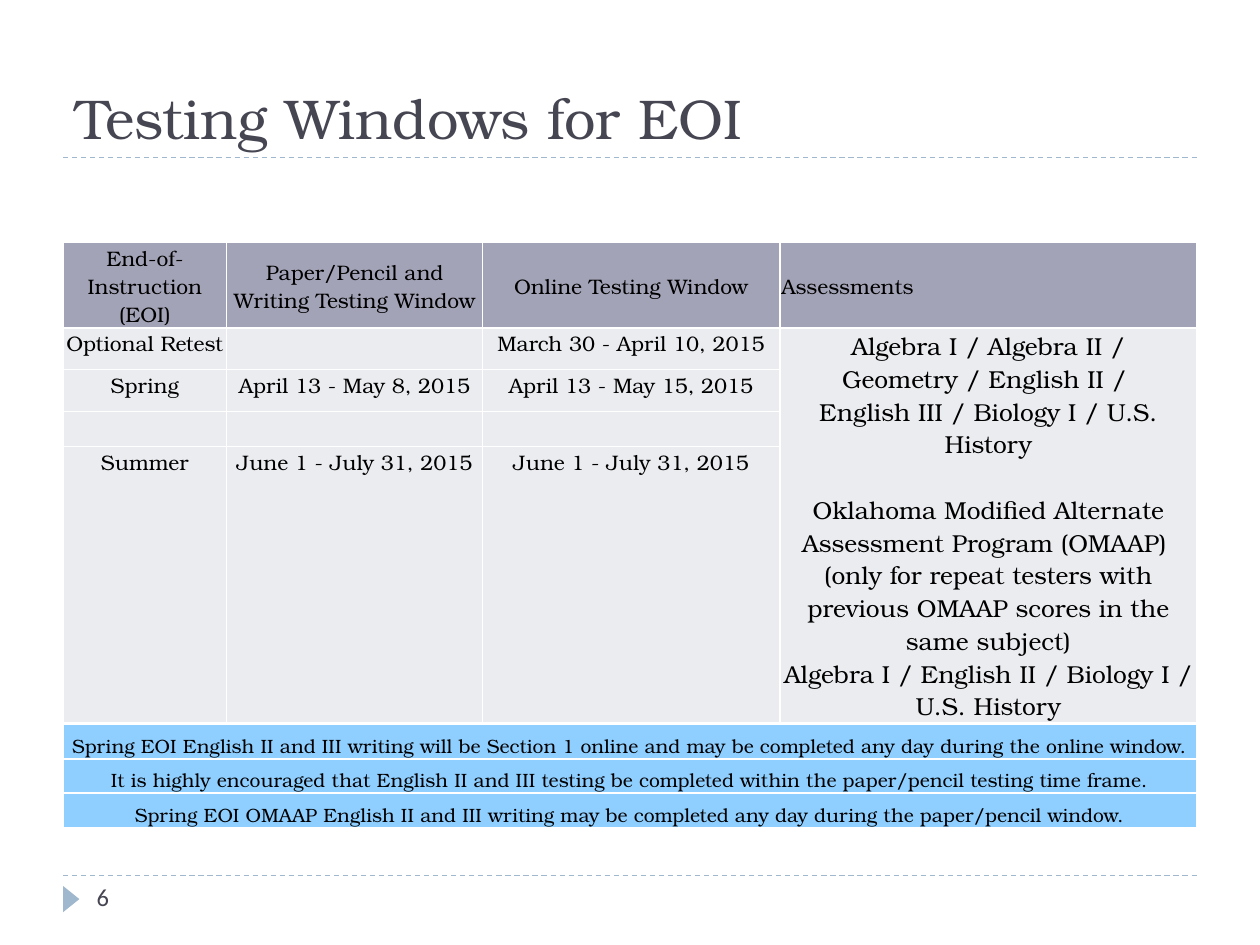
from copy import deepcopy

from lxml import etree
from pptx import Presentation
from pptx.dml.color import RGBColor
from pptx.enum.dml import MSO_LINE
from pptx.enum.shapes import MSO_CONNECTOR, MSO_SHAPE
from pptx.enum.text import MSO_ANCHOR, MSO_AUTO_SIZE, PP_ALIGN
from pptx.oxml.ns import qn
from pptx.util import Cm, Pt

TOP, MIDDLE, BOTTOM = MSO_ANCHOR.TOP, MSO_ANCHOR.MIDDLE, MSO_ANCHOR.BOTTOM
LEFT, CENTER = PP_ALIGN.LEFT, PP_ALIGN.CENTER
SERIF, SANS = "TeX Gyre Bonum", "Calibri"
COLORS = {"title": "464653", "text": "000000", "accent": "9FB8CD",
          "header": "A3A3B7", "body": "EBECF0", "note": "8FCFFF",
          "border": "FFFFFF"}


def rgb(name):
    return RGBColor.from_string(COLORS[name])


def write(tf, text, size=12, font=SERIF, color="text", align=LEFT,
          anchor=TOP, gap=0):
    """Fill a text frame; text is a string or a list of paragraphs."""
    tf.word_wrap = True
    tf.vertical_anchor = anchor
    for i, content in enumerate([text] if isinstance(text, str) else text):
        p = tf.add_paragraph() if i else tf.paragraphs[0]
        p.text = content
        p.alignment = align
        p.space_before = Pt(gap if i else 0)
        for r in p.runs:
            r.font.size, r.font.name = Pt(size), font
            r.font.color.rgb = rgb(color)
        # Line breaks and empty paragraphs carry their own size
        for br in p._p.findall(qn("a:br")):
            br.insert(0, deepcopy(p.runs[0].font._element))
        if not content:
            etree.SubElement(p._p, qn("a:endParaRPr"), sz=str(size * 100))


class SlideBuilder:
    def __init__(self, prs):
        self.slide = prs.slides.add_slide(prs.slide_layouts[5])
        self.shapes = self.slide.shapes

    def title(self, text, x, y, w, h):
        s = self.shapes.title
        s.left, s.top, s.width, s.height = Cm(x), Cm(y), Cm(w), Cm(h)
        write(s.text_frame, text, size=32, color="title", anchor=BOTTOM)
        s.text_frame.auto_size = MSO_AUTO_SIZE.NONE

    def rule(self, x, y, w):
        s = self.shapes.add_connector(MSO_CONNECTOR.STRAIGHT,
                                      Cm(x), Cm(y), Cm(x + w), Cm(y))
        s.line.color.rgb = rgb("accent")
        s.line.width = Pt(0.75)
        s.line.dash_style = MSO_LINE.DASH
        etree.SubElement(s._element.spPr, qn("a:effectLst"))

    def marker(self, x, y, w, h):
        s = self.shapes.add_shape(MSO_SHAPE.ISOSCELES_TRIANGLE,
                                  Cm(x), Cm(y), Cm(w), Cm(h))
        s.rotation = 90
        s.shadow.inherit = False
        s.fill.solid()
        s.fill.fore_color.rgb = rgb("accent")
        s.line.fill.background()

    def text(self, text, x, y, w, h, **fmt):
        s = self.shapes.add_textbox(Cm(x), Cm(y), Cm(w), Cm(h))
        write(s.text_frame, text, **fmt)

    def table(self, x, y, widths, heights):
        table = self.shapes.add_table(
            len(heights), len(widths), Cm(x), Cm(y),
            Cm(sum(widths)), Cm(sum(heights))).table
        table.first_row = table.horz_banding = False
        for column, width in zip(table.columns, widths):
            column.width = Cm(width)
        for row, height in zip(table.rows, heights):
            row.height = Cm(height)
        return table

    def cell(self, cell, text, fill, anchor=TOP, **fmt):
        cell.margin_left = cell.margin_right = cell.margin_top = Cm(0.03)
        cell.margin_bottom = 0
        write(cell.text_frame, text, **{"align": CENTER, **fmt})
        cell.vertical_anchor = anchor
        tc_pr = cell._tc.get_or_add_tcPr()
        for side in ("lnL", "lnR", "lnT", "lnB"):
            ln = etree.SubElement(tc_pr, qn(f"a:{side}"), w=str(Pt(1)))
            solid = etree.SubElement(ln, qn("a:solidFill"))
            etree.SubElement(solid, qn("a:srgbClr"), val=COLORS["border"])
        cell.fill.solid()
        cell.fill.fore_color.rgb = rgb(fill)


HEADERS = ["End-of-Instruction (EOI)", "Paper/Pencil and Writing Testing Window",
           "Online Testing Window", "Assessments"]
WINDOWS = [
    ["Optional Retest", "", "March 30 - April 10, 2015"],
    ["Spring", "April 13 - May 8, 2015", "April 13 - May 15, 2015"],
    ["", "", ""],
    ["Summer", "June 1 - July 31, 2015", "June 1 - July 31, 2015"],
]
ASSESSMENTS = [
    "Algebra I / Algebra II / Geometry / English II / \n"
    "English III / Biology I / U.S. History",
    "Oklahoma Modified Alternate Assessment Program (OMAAP) \n"
    "(only for repeat testers with previous OMAAP scores in the same subject)\n"
    "Algebra I / English II / Biology I / U.S. History",
]
NOTES = [
    "Spring EOI English II and III writing will be Section 1 online and may be "
    "completed any day during the online window.",
    "It is highly encouraged that English II and III testing be completed within "
    "the paper/pencil testing time frame.",
    "Spring EOI OMAAP English II and III writing may be completed any day during "
    "the paper/pencil window.",
]
MARGIN, WIDTH = 1.27, 22.86


def main():
    prs = Presentation()
    prs.slide_width, prs.slide_height = Cm(25.4), Cm(19.05)
    s = SlideBuilder(prs)

    # Frame and title
    for y in (17.65, 3.17):
        s.rule(MARGIN, y, WIDTH)
    s.marker(1.17, 17.96, 0.53, 0.33)
    s.title("Testing Windows for EOI", MARGIN, 0.43, WIDTH, 2.74)

    # Testing windows
    windows = s.table(MARGIN, 4.88, [3.3, 5.16, 5.99, 8.41],
                      [1.71, 0.84, 0.84, 0.71, 5.54])
    for col, text in enumerate(HEADERS):
        s.cell(windows.cell(0, col), text, "header", anchor=MIDDLE,
               align=LEFT if text == "Assessments" else CENTER)
    for row, texts in enumerate(WINDOWS, 1):
        for col, text in enumerate(texts):
            s.cell(windows.cell(row, col), text, "body")
    windows.cell(1, 3).merge(windows.cell(4, 3))
    s.cell(windows.cell(1, 3), ASSESSMENTS, "body", anchor=MIDDLE,
           size=14, gap=18.7)

    # Notes
    notes = s.table(MARGIN, 14.61, [WIDTH], [0.69] * len(NOTES))
    for row, text in enumerate(NOTES):
        s.cell(notes.cell(row, 0), text, "note", anchor=BOTTOM, size=11)

    # Page number
    s.text("6", 1.7, 17.65, 5.51, 1.02, size=14, font=SANS, color="title")

    prs.save("out.pptx")


if __name__ == "__main__":
    main()
